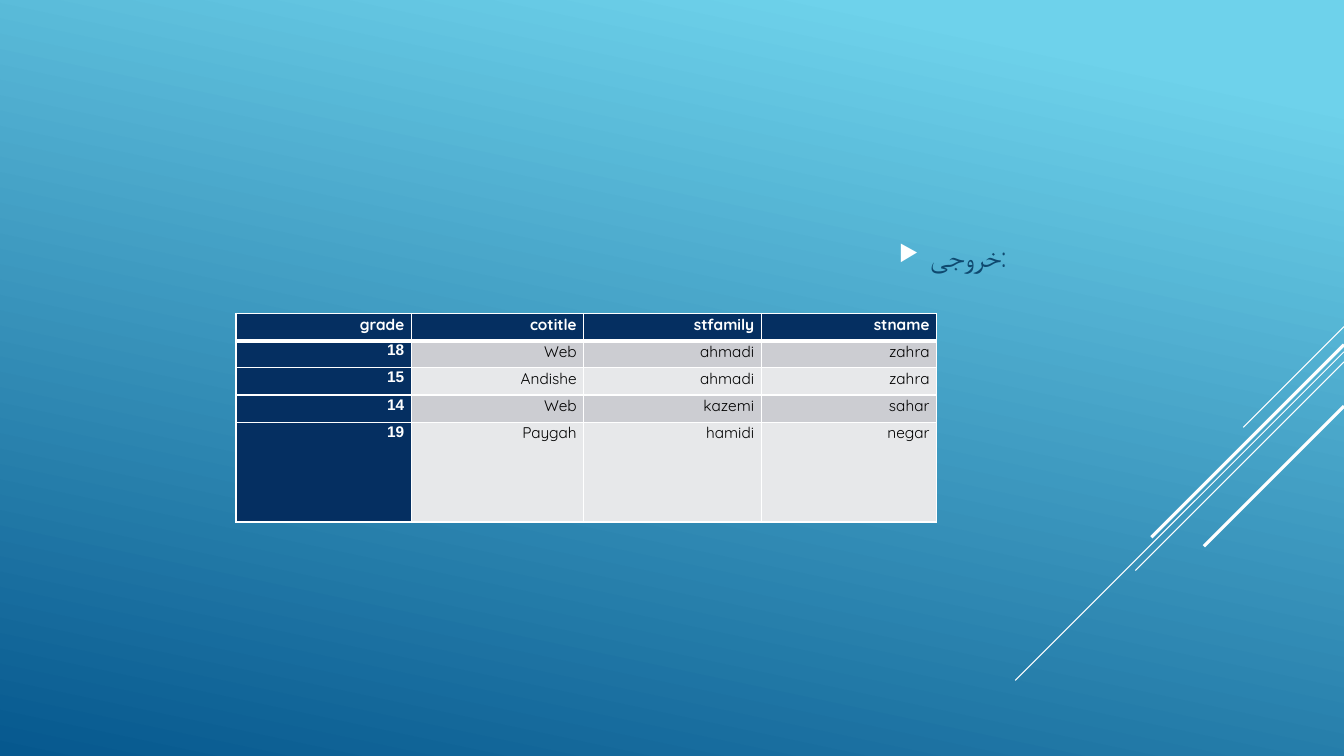
from lxml.etree import SubElement
from pptx import Presentation
from pptx.dml.color import RGBColor
from pptx.enum.shapes import MSO_CONNECTOR
from pptx.enum.text import MSO_ANCHOR, PP_ALIGN
from pptx.oxml.ns import qn
from pptx.util import Inches, Pt

WHITE = RGBColor(0xFF, 0xFF, 0xFF)
BLACK = RGBColor(0x00, 0x00, 0x00)
SKY = RGBColor(0x6E, 0xD2, 0xEB)
OCEAN = RGBColor(0x06, 0x58, 0x8E)
HEADING = RGBColor(0x0F, 0x49, 0x6F)
NAVY = RGBColor(0x05, 0x2F, 0x61)
BANDS = (RGBColor(0xCC, 0xCD, 0xD2), RGBColor(0xE7, 0xE8, 0xEA))

FONT = "Quicksand"
DIGIT_FONT = "Arial"
SLIDE_WIDTH = 13.33

STRIPES = [
    (3.24, 1.00, 0.75),
    (3.49, 3.26, 0.75),
    (3.59, 2.07, 0.75),
    (3.42, 1.91, 2.25),
    (4.03, 1.39, 2.25),
]
COLUMN_WIDTHS = (1.74, 1.71, 1.76, 1.74)
ROW_HEIGHTS = (0.27, 0.27, 0.27, 0.27, 0.99)
GRADES = [
    ("grade", "cotitle", "stfamily", "stname"),
    ("18", "Web", "ahmadi", "zahra"),
    ("15", "Andishe", "ahmadi", "zahra"),
    ("14", "Web", "kazemi", "sahar"),
    ("19", "Paygah", "hamidi", "negar"),
]


def paint_background(page):
    fill = page.background.fill
    fill.gradient()
    fill.gradient_angle = 258
    for stop, color, position in zip(fill.gradient_stops, (SKY, OCEAN), (0.1, 1)):
        stop.color.rgb = color
        stop.position = position


def add_stripe(page, top, length, weight):
    stripe = page.shapes.add_connector(
        MSO_CONNECTOR.STRAIGHT,
        Inches(SLIDE_WIDTH), Inches(top),
        Inches(SLIDE_WIDTH - length), Inches(top + length),
    )
    stripe.line.color.rgb = WHITE
    stripe.line.width = Pt(weight)
    SubElement(stripe._element.spPr, qn("a:effectLst"))


def style_span(span, size, color, bold=False, complex_font=FONT):
    span.font.size = Pt(size)
    span.font.bold = bold
    span.font.color.rgb = color
    span.font.name = FONT
    SubElement(span._r.get_or_add_rPr(), qn("a:cs"), typeface=complex_font)


def add_bullet(para, color):
    properties = para._p.get_or_add_pPr()
    properties.set("marL", str(Inches(0.31)))
    properties.set("indent", str(Inches(-0.31)))
    bullet_color = SubElement(properties, qn("a:buClr"))
    SubElement(bullet_color, qn("a:srgbClr"), val=str(color))
    SubElement(properties, qn("a:buSzPct"), val="80000")
    SubElement(properties, qn("a:buChar"), char="▶")


def add_heading(page, text):
    box = page.shapes.add_textbox(Inches(0.75), Inches(0.75), Inches(9.33), Inches(3.58))
    frame = box.text_frame
    frame.word_wrap = True
    frame.vertical_anchor = MSO_ANCHOR.MIDDLE
    frame.text = text
    para = frame.paragraphs[0]
    para.alignment = PP_ALIGN.RIGHT
    para.space_before = Pt(4)
    para.space_after = Pt(6)
    add_bullet(para, WHITE)
    style_span(para.runs[0], 20, HEADING)


def add_borders(cell, weights):
    properties = cell._tc.get_or_add_tcPr()
    for side, weight in weights.items():
        border = SubElement(properties, qn(f"a:ln{side}"), w=str(Pt(weight)))
        fill = SubElement(border, qn("a:solidFill"))
        SubElement(fill, qn("a:srgbClr"), val=str(WHITE))


def fill_cell(cell, text, row, column):
    is_header = row == 0
    is_grade = column == 0 and not is_header
    is_navy = is_header or is_grade
    cell.margin_left = cell.margin_right = Inches(0.07)
    cell.margin_top = cell.margin_bottom = 0
    add_borders(cell, {"L": 1, "R": 1, "T": 3 if row == 1 else 1, "B": 3 if is_header else 1})
    cell.fill.solid()
    cell.fill.fore_color.rgb = NAVY if is_navy else BANDS[(row - 1) % 2]
    cell.text_frame.text = text
    para = cell.text_frame.paragraphs[0]
    para.alignment = PP_ALIGN.RIGHT
    para.line_spacing = 1.07
    if is_grade:
        para._p.get_or_add_pPr().set("rtl", "1")
    style_span(para.runs[0], 11, WHITE if is_navy else BLACK, is_navy,
               DIGIT_FONT if is_grade else FONT)


def add_grade_table(page):
    table = page.shapes.add_table(
        len(GRADES), len(COLUMN_WIDTHS), Inches(2.34), Inches(3.11),
        Inches(sum(COLUMN_WIDTHS)), Inches(sum(ROW_HEIGHTS)),
    ).table
    for column, width in zip(table.columns, COLUMN_WIDTHS):
        column.width = Inches(width)
    for row, height in zip(table.rows, ROW_HEIGHTS):
        row.height = Inches(height)
    for row, values in enumerate(GRADES):
        for column, text in enumerate(values):
            fill_cell(table.cell(row, column), text, row, column)


def main():
    deck = Presentation()
    deck.slide_width = Inches(SLIDE_WIDTH)
    deck.slide_height = Inches(7.5)
    page = deck.slides.add_slide(deck.slide_layouts[6])
    paint_background(page)
    for top, length, weight in STRIPES:
        add_stripe(page, top, length, weight)
    add_heading(page, "خروجی:")
    add_grade_table(page)
    deck.save("out.pptx")


if __name__ == "__main__":
    main()
